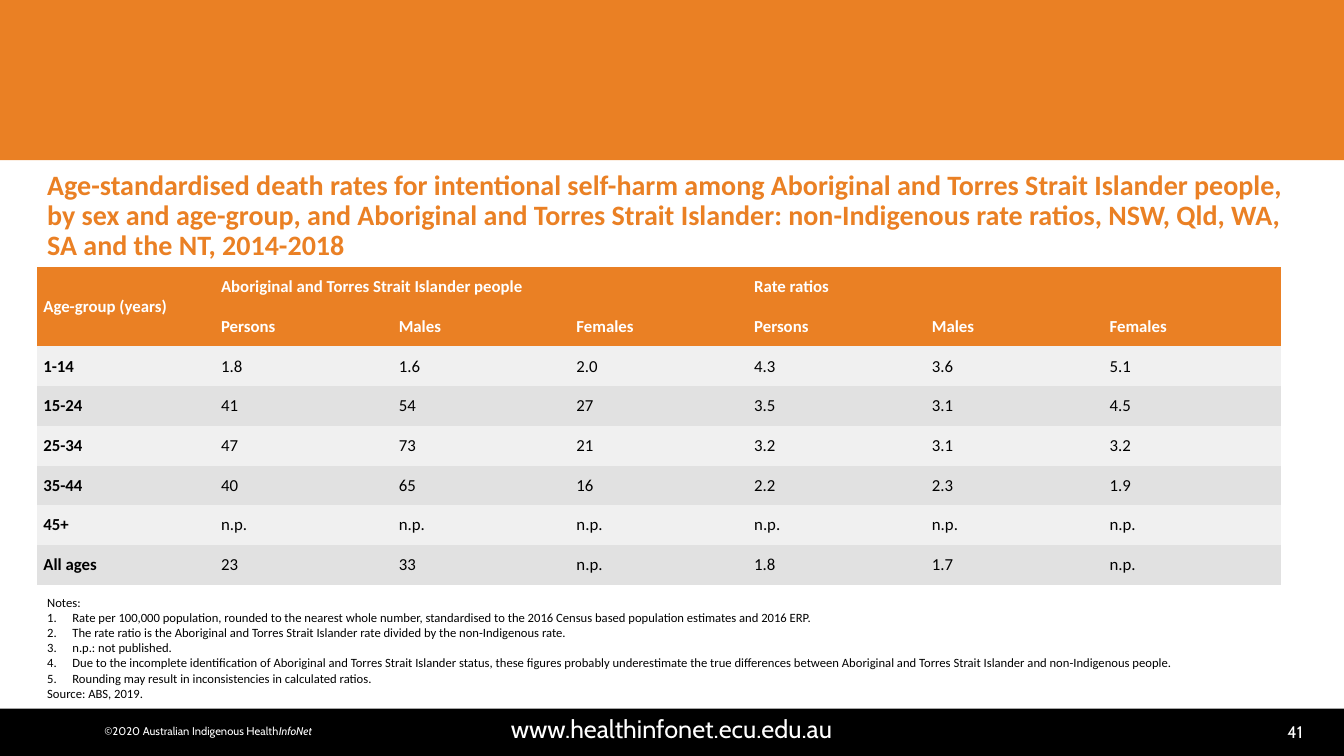
import pptx
import pptx.util
import pptx.dml.color
import pptx.enum.shapes
import pptx.enum.text
import pptx.oxml.ns
from lxml import etree

Inches, Pt = pptx.util.Inches, pptx.util.Pt
RGB = pptx.dml.color.RGBColor
ALIGN = pptx.enum.text.PP_ALIGN
ANCHOR = pptx.enum.text.MSO_ANCHOR
qn = pptx.oxml.ns.qn

ORANGE = RGB(0xEA, 0x80, 0x24)
BLACK = RGB(0, 0, 0)
WHITE = RGB(255, 255, 255)
LIGHT = RGB(0xF0, 0xF0, 0xF0)
DARK = RGB(0xE1, 0xE1, 0xE1)
PLAIN = "{2D5ABB26-0587-4C30-8999-92F81FD0307C}"  # no style, no grid

# Content
TITLE = (
    "Age-standardised death rates for intentional self-harm among Aboriginal "
    "and Torres Strait Islander people, by sex and age-group, and Aboriginal "
    "and Torres Strait Islander: non-Indigenous rate ratios, NSW, Qld, WA, SA "
    "and the NT, 2014-2018"
)
ROWS = [
    ("Age-group (years)", "Aboriginal and Torres Strait Islander people",
     "", "", "Rate ratios", "", ""),
    ("", "Persons", "Males", "Females", "Persons", "Males", "Females"),
    ("1-14", "1.8", "1.6", "2.0", "4.3", "3.6", "5.1"),
    ("15-24", "41", "54", "27", "3.5", "3.1", "4.5"),
    ("25-34", "47", "73", "21", "3.2", "3.1", "3.2"),
    ("35-44", "40", "65", "16", "2.2", "2.3", "1.9"),
    ("45+", "n.p.", "n.p.", "n.p.", "n.p.", "n.p.", "n.p."),
    ("All ages", "23", "33", "n.p.", "1.8", "1.7", "n.p."),
]
MERGES = [((0, 0), (1, 0)), ((0, 1), (0, 3)), ((0, 4), (0, 6))]
HEADS = 2
NOTES = [
    "Rate per 100,000 population, rounded to the nearest whole number, "
    "standardised to the 2016 Census based population estimates and 2016 ERP.",
    "The rate ratio is the Aboriginal and Torres Strait Islander rate divided "
    "by the non-Indigenous rate.",
    "n.p.: not published.",
    "Due to the incomplete identification of Aboriginal and Torres Strait "
    "Islander status, these figures probably underestimate the true differences "
    "between Aboriginal and Torres Strait Islander and non-Indigenous people.",
    "Rounding may result in inconsistencies in calculated ratios.",
]
BANDS = [((-0.03, 0, 13.36, 1.59), ORANGE), ((0, 7.03, 13.33, 0.47), BLACK)]

# Formats
HEAD = {"name": "Calibri", "size": Pt(20), "bold": True}
CELL = {"name": "Calibri", "size": Pt(12)}
NOTE = {"name": "Calibri", "size": Pt(9)}
PAGE = {"name": "Cabin", "size": Pt(12)}
SITE = {"name": "Cabin", "size": Pt(18)}
COPY = {"name": "Cabin", "size": Pt(8)}
INSET = {"margin_left": Inches(0.06), "margin_right": Inches(0.06),
         "margin_top": 0, "margin_bottom": 0,
         "vertical_anchor": ANCHOR.MIDDLE}


def put(item, form):
    for key, value in form.items():
        setattr(item, key, value)


def write(para, text, form, color, **more):
    run = para.add_run()
    run.text = text
    put(run.font, {**form, **more})
    run.font.color.rgb = color


def add_box(slide, place, align=ALIGN.LEFT, wrap=True, anchor=ANCHOR.TOP):
    frame = slide.shapes.add_textbox(*map(Inches, place)).text_frame
    put(frame, {"word_wrap": wrap, "vertical_anchor": anchor})
    frame.paragraphs[0].alignment = align
    return frame


def add_bands(slide):
    for place, color in BANDS:
        band = slide.shapes.add_shape(
            pptx.enum.shapes.MSO_SHAPE.RECTANGLE, *map(Inches, place))
        band.shadow.inherit = False
        band.fill.solid()
        band.fill.fore_color.rgb = color
        band.line.fill.background()


def add_foot(slide):
    page = add_box(slide, (11.95, 7.11, 1.07, 0.3), ALIGN.RIGHT,
                   anchor=ANCHOR.MIDDLE)
    write(page.paragraphs[0], "41", PAGE, WHITE)
    site = add_box(slide, (0.62, 7.03, 12.08, 0.39), ALIGN.CENTER)
    write(site.paragraphs[0], "www.healthinfonet.ecu.edu.au", SITE, WHITE)
    claim = add_box(slide, (0.92, 7.14, 2.29, 0.24), ALIGN.CENTER, wrap=False)
    claim.auto_size = pptx.enum.text.MSO_AUTO_SIZE.SHAPE_TO_FIT_TEXT
    write(claim.paragraphs[0], "©2020 Australian Indigenous Health", COPY, WHITE)
    write(claim.paragraphs[0], "InfoNet", COPY, WHITE, italic=True)


def add_rates(slide):
    place = map(Inches, (0.37, 2.65, 12.34, 3.15))
    table = slide.shapes.add_table(len(ROWS), len(ROWS[0]), *place).table
    put(table, {"first_row": False, "horz_banding": False})
    table._tbl.tblPr.find(qn("a:tableStyleId")).text = PLAIN
    for r, row in enumerate(ROWS):
        head = r < HEADS
        fill = ORANGE if head else (LIGHT, DARK)[r % 2]
        for c, text in enumerate(row):
            cell = table.cell(r, c)
            put(cell, INSET)
            cell.fill.solid()
            cell.fill.fore_color.rgb = fill
            if text:
                para = cell.text_frame.paragraphs[0]
                para.space_after = Pt(5)
                write(para, text, CELL, WHITE if head else BLACK,
                      bold=head or c == 0)
    for start, end in MERGES:
        table.cell(*start).merge(table.cell(*end))


def add_notes(slide):
    frame = add_box(slide, (0.37, 5.85, 12.6, 1.65))
    lines = ["Notes:", *NOTES, "Source: ABS, 2019."]
    for i, text in enumerate(lines):
        para = frame.add_paragraph() if i else frame.paragraphs[0]
        props = para._p.get_or_add_pPr()
        if text in NOTES:
            props.set("marL", str(Inches(0.25)))
            props.set("indent", str(-Inches(0.25)))
            etree.SubElement(props, qn("a:buFont"), typeface="+mj-lt")
            etree.SubElement(props, qn("a:buAutoNum"), type="arabicPeriod")
        tabs = etree.SubElement(props, qn("a:tabLst"))
        for stop in (0.5, 0.65):
            etree.SubElement(tabs, qn("a:tab"), pos=str(Inches(stop)), algn="l")
        write(para, text, NOTE, BLACK)


def main():
    deck = pptx.Presentation()
    put(deck, {"slide_width": Inches(13.33), "slide_height": Inches(7.5)})
    slide = deck.slides.add_slide(deck.slide_layouts[6])
    add_bands(slide)
    add_foot(slide)
    # Title
    para = add_box(slide, (0.37, 1.65, 12.6, 0.84)).paragraphs[0]
    para.line_spacing = 0.9
    write(para, TITLE, HEAD, ORANGE)
    # Table and notes
    add_rates(slide)
    add_notes(slide)
    deck.save("out.pptx")


if __name__ == "__main__":
    main()
